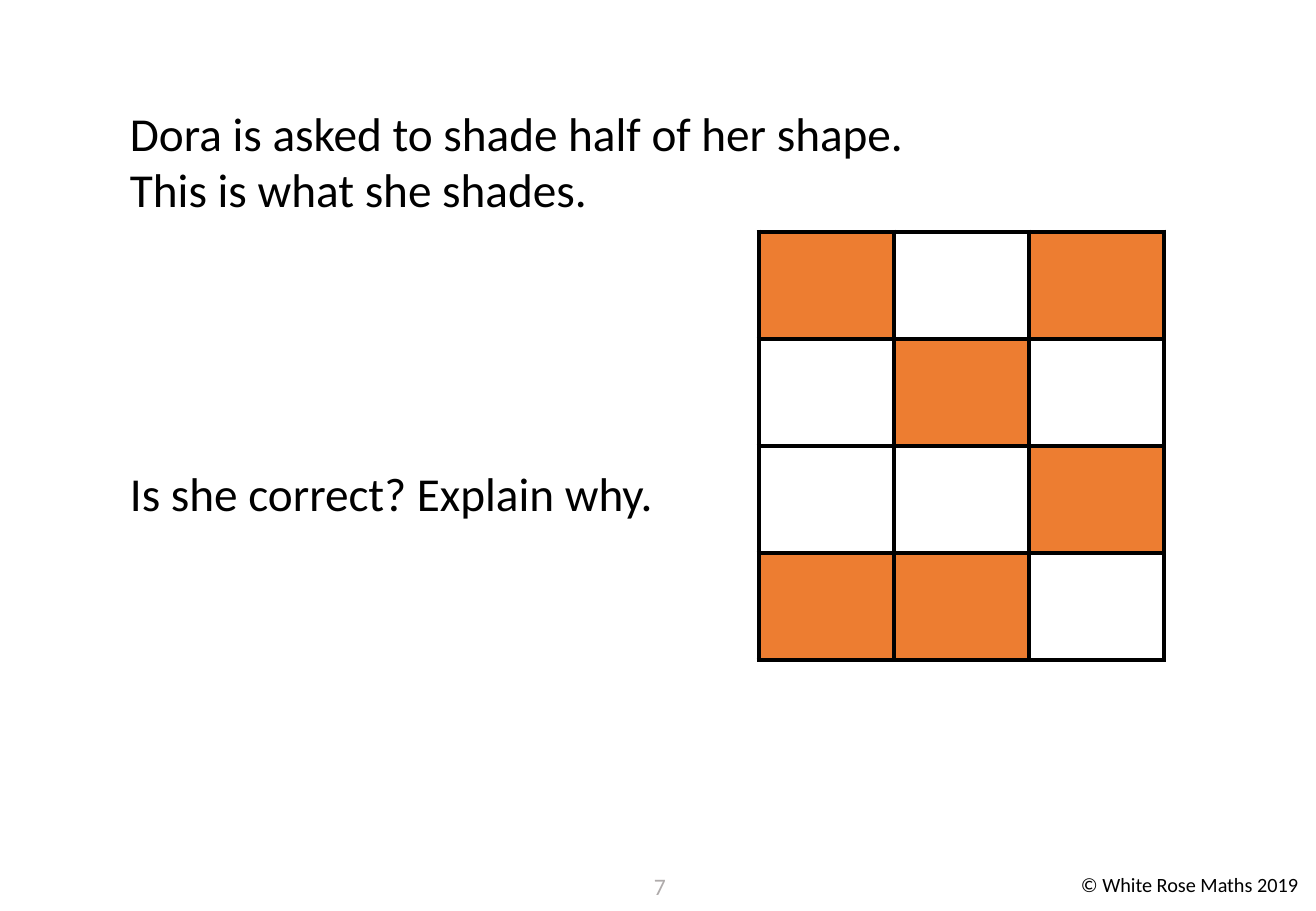
from lxml.etree import SubElement
from pptx import Presentation
from pptx.dml.color import RGBColor
from pptx.enum.text import PP_ALIGN
from pptx.oxml.ns import qn
from pptx.util import Emu, Pt

EMU_PER_PX = 7526
BLACK, GREY, ORANGE = "000000", "AFABAB", "ED7D31"
SHADED_GRID = ["X.X", ".X.", "..X", "XX."]


def px(length):
    return Emu(length * EMU_PER_PX)


def color(hex_code):
    return RGBColor.from_string(hex_code)


def add_text(page, lines, left, top, width, height, size=28, fill=BLACK,
             align=PP_ALIGN.LEFT, wrap=True, gaps=None):
    """Add one paragraph per line; gaps maps a line index to points before it."""
    box = page.shapes.add_textbox(px(left), px(top), px(width), px(height))
    frame = box.text_frame
    frame.word_wrap = wrap
    for index, line in enumerate(lines):
        para = frame.paragraphs[0] if index == 0 else frame.add_paragraph()
        para.alignment = align
        if gaps and index in gaps:
            para.space_before = Pt(gaps[index])
        span = para.add_run()
        span.text = line
        span.font.name = "Calibri"
        span.font.size = Pt(size)
        span.font.color.rgb = color(fill)


def set_borders(cell, hex_code, points):
    properties = cell._tc.get_or_add_tcPr()
    for position, side in enumerate(("lnL", "lnR", "lnT", "lnB")):
        line = properties.makeelement(qn(f"a:{side}"), {"w": str(Pt(points))})
        solid = SubElement(line, qn("a:solidFill"))
        SubElement(solid, qn("a:srgbClr"), val=hex_code)
        properties.insert(position, line)


def add_shaded_grid(page, pattern, left, top, cell_width, cell_height):
    rows, columns = len(pattern), len(pattern[0])
    frame = page.shapes.add_table(rows, columns, px(left), px(top),
                                  px(columns * cell_width), px(rows * cell_height))
    grid = frame.table
    grid.first_row = grid.horz_banding = False
    for column in grid.columns:
        column.width = px(cell_width)
    for row, marks in zip(grid.rows, pattern):
        row.height = px(cell_height)
        for cell, mark in zip(row.cells, marks):
            if mark == "X":
                cell.fill.solid()
                cell.fill.fore_color.rgb = color(ORANGE)
            else:
                cell.fill.background()
            set_borders(cell, BLACK, 3)


def main():
    deck = Presentation()
    deck.slide_width, deck.slide_height = px(1316), px(911)
    page = deck.slides.add_slide(deck.slide_layouts[6])

    # Footer
    add_text(page, ["© White Rose Maths 2019"], 1069, 866, 247, 36, size=12, wrap=False)
    add_text(page, ["7"], 629, 866, 62, 45, size=14, fill=GREY, align=PP_ALIGN.CENTER)

    # Question
    question = ["Dora is asked to shade half of her shape.",
                "This is what she shades.",
                "Is she correct? Explain why."]
    add_text(page, question, 118, 98, 1070, 601, gaps={2: 146})

    # Dora's shape
    add_shaded_grid(page, SHADED_GRID, 759, 232, 135, 107)

    deck.save("out.pptx")


if __name__ == "__main__":
    main()
